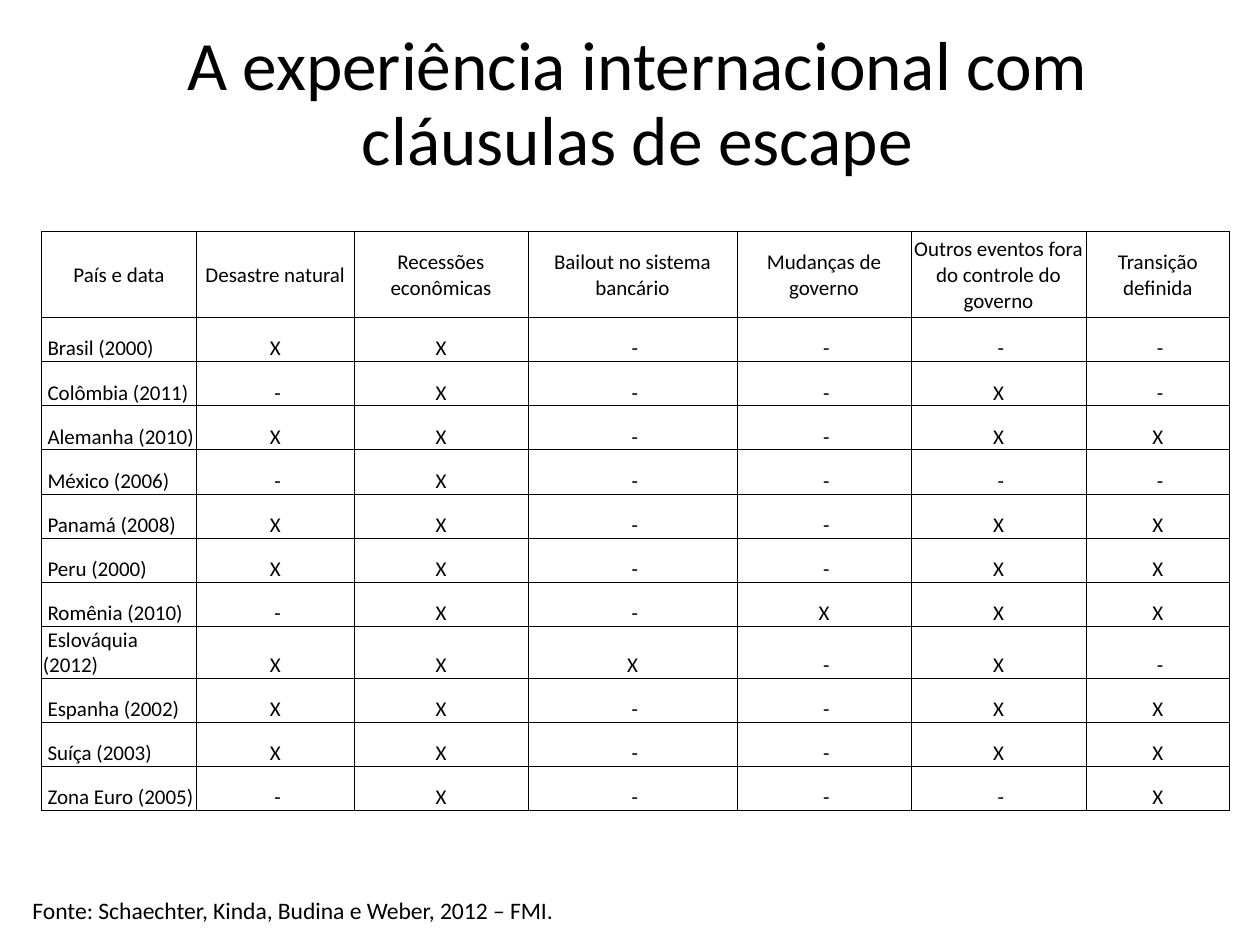
from dataclasses import dataclass

import pptx
import pptx.dml.color
import pptx.enum.text
import pptx.oxml
import pptx.oxml.ns
import pptx.util

ALIGN = pptx.enum.text.PP_ALIGN
ANCHOR = pptx.enum.text.MSO_ANCHOR
INK = "000000"
FONT = "Calibri"
SLIDE_WIDTH, SLIDE_HEIGHT = 10, 7.5
TABLE_LEFT, TABLE_TOP = 0.33, 1.84
HEADER_HEIGHT, COUNTRY_HEIGHT = 0.68, 0.35


@dataclass
class Clause:
    heading: str
    width: float


@dataclass
class Country:
    label: str
    marks: str  # one character per clause: X or -


@dataclass
class Caption:
    text: str
    left: float  # shares of the slide's size
    top: float
    width: float
    height: float
    size: float
    align: ALIGN = ALIGN.LEFT
    anchor: ANCHOR = ANCHOR.TOP
    line_spacing: float = 1.0


CLAUSES = [
    Clause("País e data", 1.23),
    Clause("Desastre natural", 1.25),
    Clause("Recessões econômicas", 1.38),
    Clause("Bailout no sistema bancário", 1.66),
    Clause("Mudanças de governo", 1.38),
    Clause("Outros eventos fora do controle do governo", 1.39),
    Clause("Transição definida", 1.14),
]
COUNTRIES = [
    Country("Brasil (2000)", "XX----"),
    Country("Colômbia (2011)", "-X--X-"),
    Country("Alemanha (2010)", "XX--XX"),
    Country("México (2006)", "-X----"),
    Country("Panamá (2008)", "XX--XX"),
    Country("Peru (2000)", "XX--XX"),
    Country("Romênia (2010)", "-X-XXX"),
    Country("Eslováquia (2012)", "XXX-X-"),
    Country("Espanha (2002)", "XX--XX"),
    Country("Suíça (2003)", "XX--XX"),
    Country("Zona Euro (2005)", "-X---X"),
]
CAPTIONS = [
    Caption("A experiência internacional com cláusulas de escape",
            0.059, 0.057, 0.894, 0.11, 39.6, ALIGN.CENTER, ANCHOR.MIDDLE, 0.9),
    Caption("Fonte: Schaechter, Kinda, Budina e Weber, 2012 – FMI.",
            0.016, 0.941, 0.45, 0.044, 13.5),
]


def color(value: str) -> pptx.dml.color.RGBColor:
    return pptx.dml.color.RGBColor.from_string(value)


def write(paragraph, text: str, size: float, align: ALIGN) -> None:
    paragraph.text = text
    paragraph.alignment = align
    paragraph.font.name = FONT
    paragraph.font.size = pptx.util.Pt(size)
    paragraph.font.color.rgb = color(INK)


def draw_caption(slide, caption: Caption) -> None:
    box = slide.shapes.add_textbox(
        pptx.util.Inches(caption.left * SLIDE_WIDTH),
        pptx.util.Inches(caption.top * SLIDE_HEIGHT),
        pptx.util.Inches(caption.width * SLIDE_WIDTH),
        pptx.util.Inches(caption.height * SLIDE_HEIGHT))
    frame = box.text_frame
    frame.word_wrap = True
    frame.vertical_anchor = caption.anchor
    write(frame.paragraphs[0], caption.text, caption.size, caption.align)
    frame.paragraphs[0].line_spacing = caption.line_spacing


def draw_borders(cell) -> None:
    properties = cell._tc.get_or_add_tcPr()
    for position, side in enumerate(("lnL", "lnR", "lnT", "lnB")):
        border = pptx.oxml.parse_xml(
            f'<a:{side} {pptx.oxml.ns.nsdecls("a")} w="{pptx.util.Pt(0.5)}">'
            f'<a:solidFill><a:srgbClr val="{INK}"/></a:solidFill></a:{side}>')
        properties.insert(position, border)


def fill_cell(cell, text: str, align: ALIGN, anchor: ANCHOR) -> None:
    cell.fill.background()
    cell.margin_left = cell.margin_right = cell.margin_top = pptx.util.Inches(0.01)
    cell.margin_bottom = 0
    cell.vertical_anchor = anchor
    write(cell.text_frame.paragraphs[0], text, 12, align)
    draw_borders(cell)


def draw_clause_table(slide) -> None:
    width = sum(clause.width for clause in CLAUSES)
    height = HEADER_HEIGHT + COUNTRY_HEIGHT * len(COUNTRIES)
    table = slide.shapes.add_table(
        len(COUNTRIES) + 1, len(CLAUSES),
        pptx.util.Inches(TABLE_LEFT), pptx.util.Inches(TABLE_TOP),
        pptx.util.Inches(width), pptx.util.Inches(height)).table
    table.first_row = table.horz_banding = False

    # Headings
    table.rows[0].height = pptx.util.Inches(HEADER_HEIGHT)
    for column, clause in enumerate(CLAUSES):
        table.columns[column].width = pptx.util.Inches(clause.width)
        fill_cell(table.cell(0, column), clause.heading, ALIGN.CENTER, ANCHOR.MIDDLE)

    # Countries and their marks
    for row, country in enumerate(COUNTRIES, start=1):
        table.rows[row].height = pptx.util.Inches(COUNTRY_HEIGHT)
        fill_cell(table.cell(row, 0), f" {country.label}", ALIGN.LEFT, ANCHOR.BOTTOM)
        for column, mark in enumerate(country.marks, start=1):
            text = " -" if mark == "-" else mark
            fill_cell(table.cell(row, column), text, ALIGN.CENTER, ANCHOR.BOTTOM)


def main() -> None:
    deck = pptx.Presentation()
    deck.slide_width = pptx.util.Inches(SLIDE_WIDTH)
    deck.slide_height = pptx.util.Inches(SLIDE_HEIGHT)
    slide = deck.slides.add_slide(deck.slide_layouts[6])
    title, source = CAPTIONS
    draw_caption(slide, title)
    draw_clause_table(slide)
    draw_caption(slide, source)
    deck.save("out.pptx")


if __name__ == "__main__":
    main()
